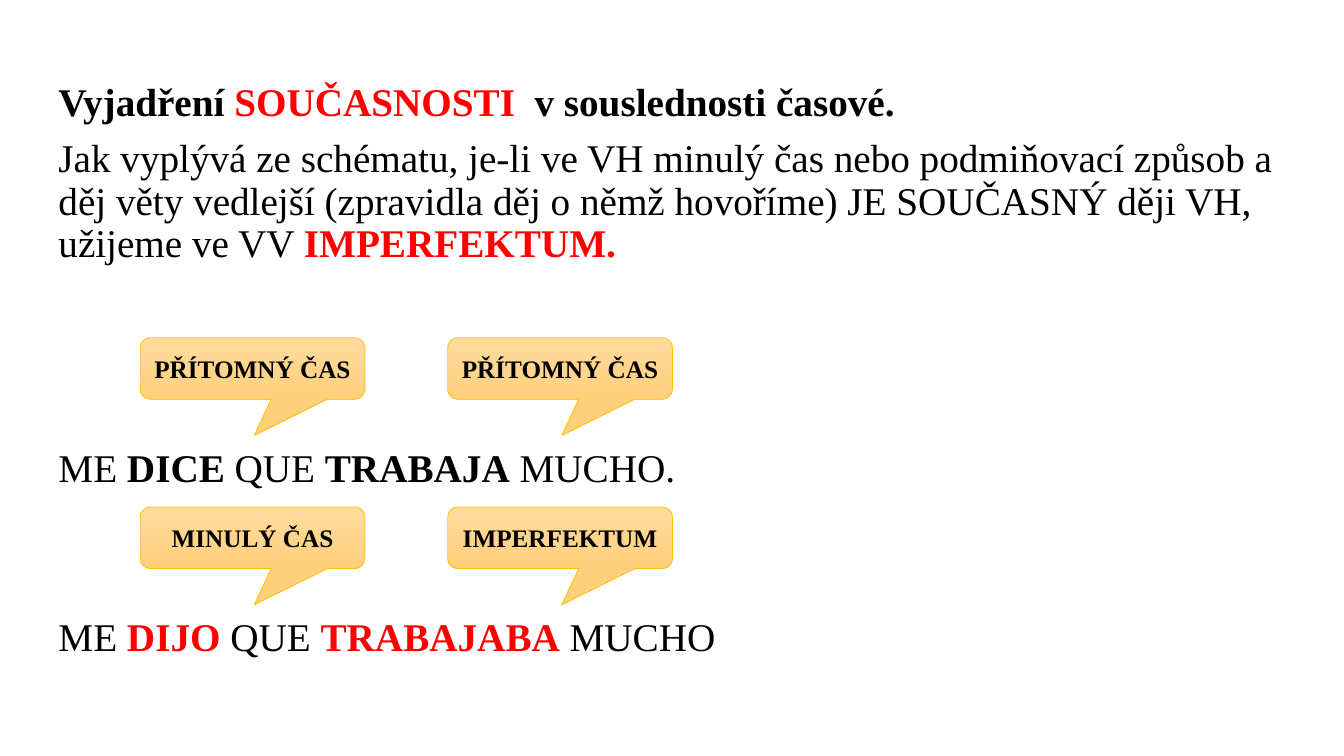
from pptx import Presentation
from pptx.dml.color import RGBColor
from pptx.enum.shapes import MSO_SHAPE
from pptx.enum.text import MSO_ANCHOR, MSO_AUTO_SIZE, PP_ALIGN
from pptx.oxml.ns import qn
from pptx.util import Inches, Pt
from lxml.etree import SubElement


def paint(color, code):
    color.rgb = RGBColor.from_string(code)


def write(para, text, size, code, bold):
    run = para.add_run()
    run.text = text
    run.font.name = "Times New Roman"
    run.font.size = Pt(size)
    run.font.bold = bold
    paint(run.font.color, code)


BLACK, RED = "000000", "FF0000"

deck = Presentation()
deck.slide_width = Inches(13.33)
deck.slide_height = Inches(7.5)
slide = deck.slides.add_slide(deck.slide_layouts[1])
title, body = slide.placeholders
title.element.getparent().remove(title.element)

body.left, body.top = Inches(0.48), Inches(0.77)
body.width, body.height = Inches(12.41), Inches(6.35)
frame = body.text_frame
frame.auto_size = MSO_AUTO_SIZE.NONE
frame.vertical_anchor = MSO_ANCHOR.TOP

lines = [
    (10, [("Vyjadření ", BLACK, True), ("SOUČASNOSTI", RED, True),
          ("  v souslednosti časové.", BLACK, True)]),
    (10, [("Jak vyplývá ze schématu, je-li ve VH minulý čas nebo podmiňovací "
           "způsob a děj věty vedlejší (zpravidla děj o němž hovoříme) "
           "JE SOUČASNÝ ději VH, užijeme ve VV ", BLACK, False),
          ("IMPERFEKTUM.", RED, True)]),
    (130.5, [("ME ", BLACK, False), ("DICE", BLACK, True),
             (" QUE ", BLACK, False), ("TRABAJA", BLACK, True),
             (" MUCHO.", BLACK, False)]),
    (90.5, [("ME ", BLACK, False), ("DIJO", RED, True),
            (" QUE ", BLACK, False), ("TRABAJABA", RED, True),
            (" MUCHO", BLACK, False)]),
]
for i, (gap, runs) in enumerate(lines):
    para = frame.add_paragraph() if i else frame.paragraphs[0]
    para.line_spacing = 0.9
    para.space_before = Pt(gap)
    props = para._p.get_or_add_pPr()
    props.set("marL", "0")
    props.set("indent", "0")
    SubElement(props, qn("a:buNone"))
    for text, code, bold in runs:
        write(para, text, 28, code, bold)

labels = [("PŘÍTOMNÝ ČAS", "PŘÍTOMNÝ ČAS"), ("MINULÝ ČAS", "IMPERFEKTUM")]
for row, pair in enumerate(labels):
    for col, label in enumerate(pair):
        bubble = slide.shapes.add_shape(
            MSO_SHAPE.ROUNDED_RECTANGULAR_CALLOUT,
            Inches(1.39 + 3.05 * col), Inches(3.35 + 1.68 * row),
            Inches(2.23), Inches(0.61))
        bubble.shadow.inherit = False
        for i, value in enumerate((0.008, 1.09, 0.167)):
            bubble.adjustments[i] = value
        bubble.fill.gradient()
        bubble.fill.gradient_angle = 270
        for stop, code in zip(bubble.fill.gradient_stops, ("FFDB9E", "FFD07C")):
            paint(stop.color, code)
        paint(bubble.line.color, "FFC000")
        bubble.line.width = Pt(0.5)
        bubble.text_frame.vertical_anchor = MSO_ANCHOR.MIDDLE
        para = bubble.text_frame.paragraphs[0]
        para.alignment = PP_ALIGN.CENTER
        write(para, label, 18, BLACK, True)

deck.save("out.pptx")
